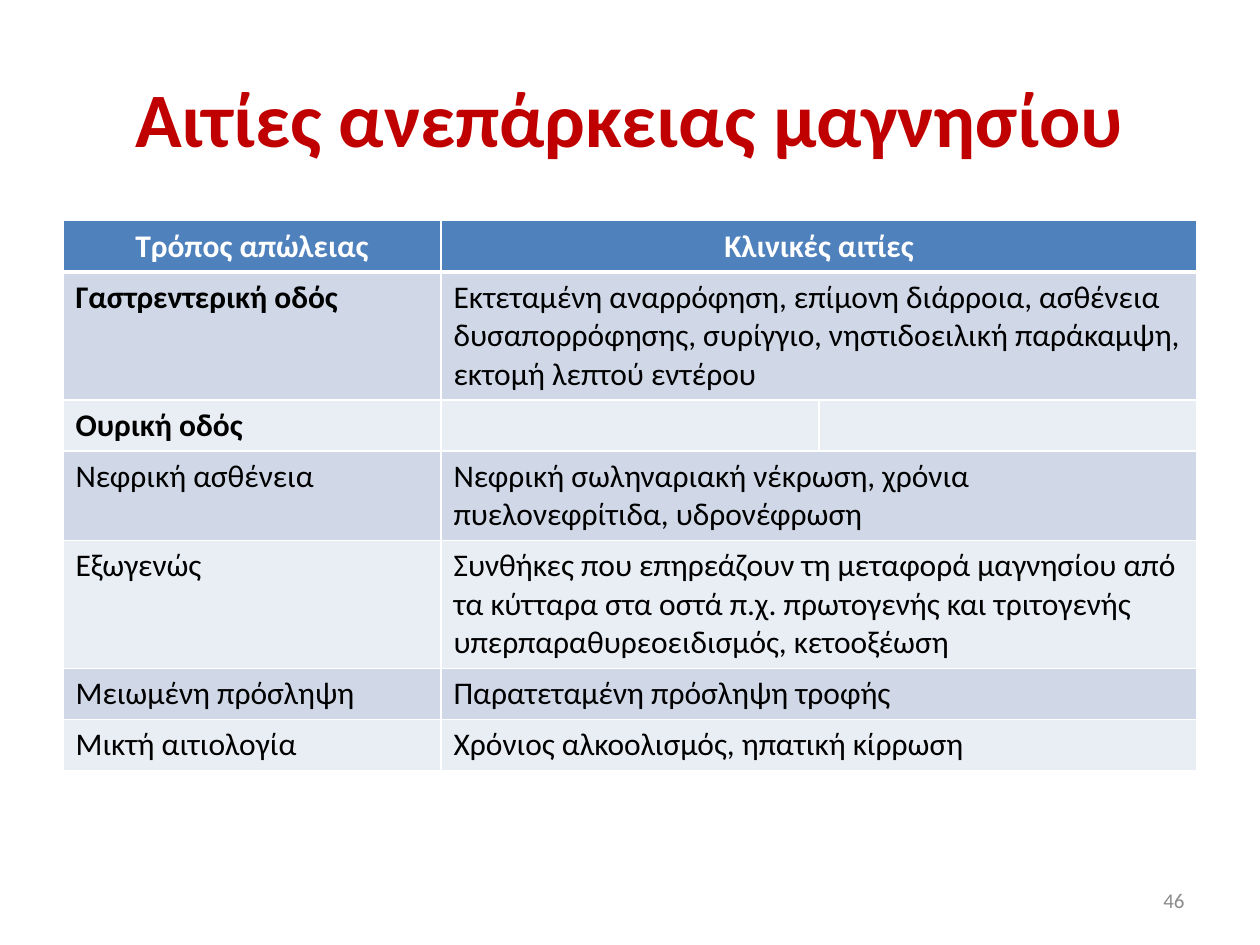
import pptx
import pptx.util
import pptx.dml.color
import pptx.enum.text
import pptx.oxml.ns
from dataclasses import dataclass
from lxml import etree

Cm = pptx.util.Cm
Pt = pptx.util.Pt
Align = pptx.enum.text.PP_ALIGN
Anchor = pptx.enum.text.MSO_ANCHOR


@dataclass(frozen=True)
class Theme:
    font: str = "Calibri"
    title: str = "C00000"
    head: str = "4F81BD"
    bands: tuple = ("D0D8E8", "E9EDF4")
    light: str = "FFFFFF"
    dark: str = "000000"
    muted: str = "8C8C8C"
    big: int = 44
    body: int = 18
    small: int = 12


class Deck:
    def __init__(self, theme):
        self.theme = theme
        self.file = pptx.Presentation()
        self.file.slide_width, self.file.slide_height = Cm(25.4), Cm(19.05)
        self.slide = None

    def start(self):
        self.slide = self.file.slides.add_slide(self.file.slide_layouts[5])

    def label(self, frame, text, size, color, bold=False, align=Align.LEFT):
        frame.word_wrap = True
        para = frame.paragraphs[0]
        para.text = text
        para.alignment = align
        font = para.font
        font.name, font.size, font.bold = self.theme.font, Pt(size), bold
        font.color.rgb = pptx.dml.color.RGBColor.from_string(color)

    def title(self, text, left, top, width, height):
        box = self.slide.shapes.title
        box.left, box.top = Cm(left), Cm(top)
        box.width, box.height = Cm(width), Cm(height)
        box.text_frame.vertical_anchor = Anchor.MIDDLE
        self.label(box.text_frame, text, self.theme.big, self.theme.title,
                   True, Align.CENTER)

    def number(self, text, left, top, width, height):
        box = self.slide.shapes.add_textbox(Cm(left), Cm(top), Cm(width), Cm(height))
        box.text_frame.vertical_anchor = Anchor.MIDDLE
        self.label(box.text_frame, text, self.theme.small, self.theme.muted,
                   align=Align.RIGHT)

    def border(self, cell, widths):
        # Cell lines come before the fill in the cell properties
        props = cell._tc.get_or_add_tcPr()
        name = pptx.oxml.ns.qn
        for spot, (side, width) in enumerate(widths.items()):
            line = etree.Element(name("a:ln" + side), w=str(Pt(width)))
            fill = etree.SubElement(line, name("a:solidFill"))
            etree.SubElement(fill, name("a:srgbClr"), val=self.theme.light)
            props.insert(spot, line)

    def table(self, rows, left, top, width, height):
        count = 3
        frame = self.slide.shapes.add_table(
            len(rows), count, Cm(left), Cm(top), Cm(width), Cm(height * len(rows)))
        grid = frame.table
        grid.first_row = grid.horz_banding = False
        theme = self.theme
        for row, (name, cause, bold) in enumerate(rows):
            head = row == 0
            shade = theme.head if head else theme.bands[(row - 1) % 2]
            color = theme.light if head else theme.dark
            align = Align.CENTER if head else Align.LEFT
            if cause:
                grid.cell(row, 1).merge(grid.cell(row, 2))
            for col, text in enumerate((name, cause, "")):
                cell = grid.cell(row, col)
                cell.fill.solid()
                cell.fill.fore_color.rgb = pptx.dml.color.RGBColor.from_string(shade)
                self.border(cell, {"L": 1, "R": 1, "T": 3 if row == 1 else 1,
                                   "B": 3 if head else 1})
                self.label(cell.text_frame, text, theme.body, color,
                           head or (bold and col == 0), align)


# Way of loss, clinical causes, bold first cell
ROWS = [
    ("Τρόπος απώλειας", "Κλινικές αιτίες", True),
    ("Γαστρεντερική οδός",
     "Εκτεταμένη αναρρόφηση, επίμονη διάρροια, ασθένεια δυσαπορρόφησης, "
     "συρίγγιο, νηστιδοειλική παράκαμψη, εκτομή λεπτού εντέρου", True),
    ("Ουρική οδός", "", True),
    ("Νεφρική ασθένεια",
     "Νεφρική σωληναριακή νέκρωση, χρόνια πυελονεφρίτιδα, υδρονέφρωση", False),
    ("Εξωγενώς",
     "Συνθήκες που επηρεάζουν τη μεταφορά μαγνησίου από τα κύτταρα στα οστά "
     "π.χ. πρωτογενής και τριτογενής υπερπαραθυρεοειδισμός, κετοοξέωση", False),
    ("Μειωμένη πρόσληψη", "Παρατεταμένη πρόσληψη τροφής", False),
    ("Μικτή αιτιολογία", "Χρόνιος αλκοολισμός, ηπατική κίρρωση", False),
]


def main():
    deck = Deck(Theme())
    deck.start()
    # Title
    deck.title("Αιτίες ανεπάρκειας μαγνησίου", 1.27, 0.76, 22.86, 3.18)
    # Table of causes
    deck.table(ROWS, 1.27, 4.45, 22.86, 1.03)
    # Slide number
    deck.number("46", 18.2, 17.65, 5.93, 1.01)
    deck.file.save("out.pptx")


if __name__ == "__main__":
    main()
